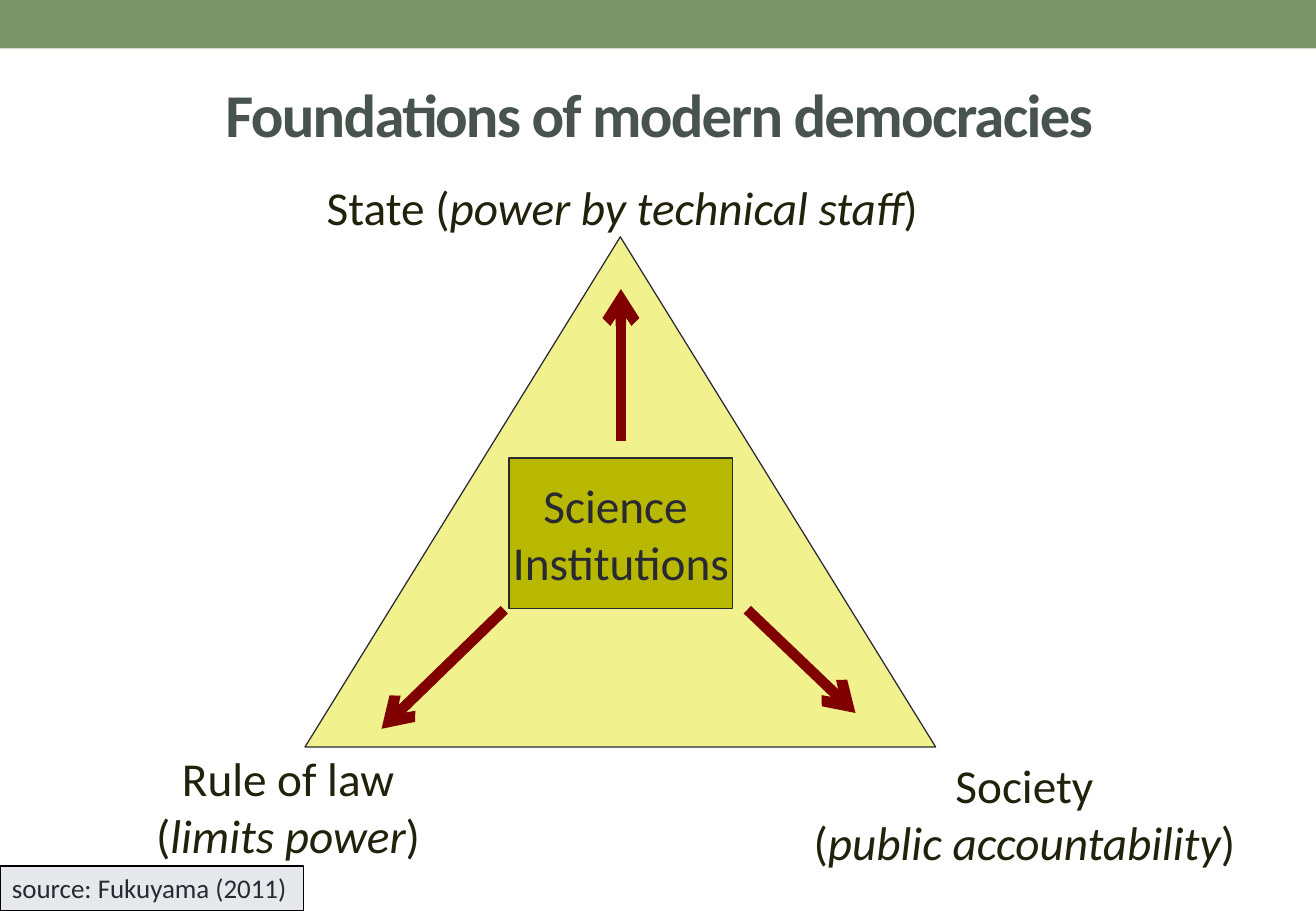
from dataclasses import dataclass

from lxml.etree import SubElement
from pptx import Presentation
from pptx.dml.color import RGBColor
from pptx.enum.shapes import MSO_CONNECTOR, MSO_SHAPE
from pptx.enum.text import MSO_ANCHOR, MSO_AUTO_SIZE, PP_ALIGN
from pptx.oxml.ns import qn
from pptx.util import Pt

EMU_PER_PX = 9144  # 100 px to the inch


@dataclass(frozen=True)
class Theme:
    font: str = "Calibri"
    band: str = "7B9469"
    title: str = "47534C"
    label: str = "22210C"
    ink: str = "292934"
    triangle: str = "F1F18D"
    core: str = "B8B800"
    arrow: str = "800000"
    source_fill: str = "E6E8EC"
    source_line: str = "000000"
    title_size: int = 36
    label_size: int = 28
    source_size: int = 16
    outline: float = 0.75
    arrow_width: float = 6.25


THEME = Theme()


def px(*lengths):
    return [length * EMU_PER_PX for length in lengths]


def color(value):
    return RGBColor.from_string(value)


def write_text(frame, lines, size=THEME.label_size, ink=THEME.label, align=PP_ALIGN.CENTER,
               anchor=MSO_ANCHOR.TOP, wrap=False, fit=MSO_AUTO_SIZE.SHAPE_TO_FIT_TEXT,
               bold=False, tracking=0):
    """Write one paragraph per line; text between asterisks is italic."""
    frame.word_wrap, frame.auto_size, frame.vertical_anchor = wrap, fit, anchor
    for index, line in enumerate(lines):
        paragraph = frame.add_paragraph() if index else frame.paragraphs[0]
        paragraph.alignment = align
        for position, text in enumerate(line.split("*")):
            run = paragraph.add_run()
            run.text = text
            run.font.name, run.font.size = THEME.font, Pt(size)
            run.font.bold, run.font.italic = bold, position % 2 == 1
            run.font.color.rgb = color(ink)
            if tracking:
                run._r.get_or_add_rPr().set("spc", str(tracking * 100))


def add_title(slide, box, text):
    title = slide.shapes.title
    title.left, title.top, title.width, title.height = px(*box)
    write_text(title.text_frame, [text], size=THEME.title_size, ink=THEME.title, bold=True,
               anchor=MSO_ANCHOR.MIDDLE, wrap=True, fit=MSO_AUTO_SIZE.NONE, tracking=-1)


def add_figure(slide, kind, box, fill, line=None):
    shape = slide.shapes.add_shape(kind, *px(*box))
    shape.shadow.inherit = False
    shape.fill.solid()
    shape.fill.fore_color.rgb = color(fill)
    if line:
        shape.line.color.rgb = color(line)
        shape.line.width = Pt(THEME.outline)
    else:
        shape.line.fill.background()
    return shape


def add_label(slide, box, lines, **text_format):
    label = slide.shapes.add_textbox(*px(*box))
    write_text(label.text_frame, lines, **text_format)


def add_arrow(slide, start, end):
    arrow = slide.shapes.add_connector(MSO_CONNECTOR.STRAIGHT, *px(*start, *end))
    arrow.line.color.rgb = color(THEME.arrow)
    arrow.line.width = Pt(THEME.arrow_width)
    SubElement(arrow.line._get_or_add_ln(), qn("a:tailEnd"), type="arrow")
    SubElement(arrow._element.spPr, qn("a:effectLst"))


def main():
    presentation = Presentation()
    presentation.slide_width, presentation.slide_height = px(1083, 750)
    slide = presentation.slides.add_slide(presentation.slide_layouts[5])

    # Band and title
    add_figure(slide, MSO_SHAPE.RECTANGLE, (0, 0, 1083, 40), THEME.band)
    add_title(slide, (55, 48, 975, 91), "Foundations of modern democracies")

    # Triangle and the labels of its corners
    add_figure(slide, MSO_SHAPE.ISOSCELES_TRIANGLE, (251, 195, 519, 420),
               THEME.triangle, THEME.ink)
    add_label(slide, (259, 142, 515, 57), ["State (*power by technical staff*)"],
              align=PP_ALIGN.LEFT)
    add_label(slide, (656, 618, 374, 104), ["Society", "(*public accountability*)"])
    add_label(slide, (117, 612, 240, 104), ["Rule of law", "(*limits power*)"])

    # Source note
    source = add_figure(slide, MSO_SHAPE.RECTANGLE, (0, 713, 250, 37),
                        THEME.source_fill, THEME.source_line)
    write_text(source.text_frame, ["source: Fukuyama (2011)"], size=THEME.source_size,
               ink=THEME.ink, align=PP_ALIGN.LEFT)

    # Core: a hexagon with its side points pulled flat
    core = add_figure(slide, MSO_SHAPE.HEXAGON, (419, 377, 184, 124), THEME.core, THEME.ink)
    core.adjustments[0] = 0
    write_text(core.text_frame, ["Science ", "Institutions"], ink=THEME.ink,
               anchor=MSO_ANCHOR.MIDDLE, fit=MSO_AUTO_SIZE.NONE)

    # Arrows from the core to the corners
    for start, end in (((615, 502), (704, 587)),
                       ((511, 363), (511, 238)),
                       ((415, 502), (314, 600))):
        add_arrow(slide, start, end)

    presentation.save("out.pptx")


if __name__ == "__main__":
    main()
